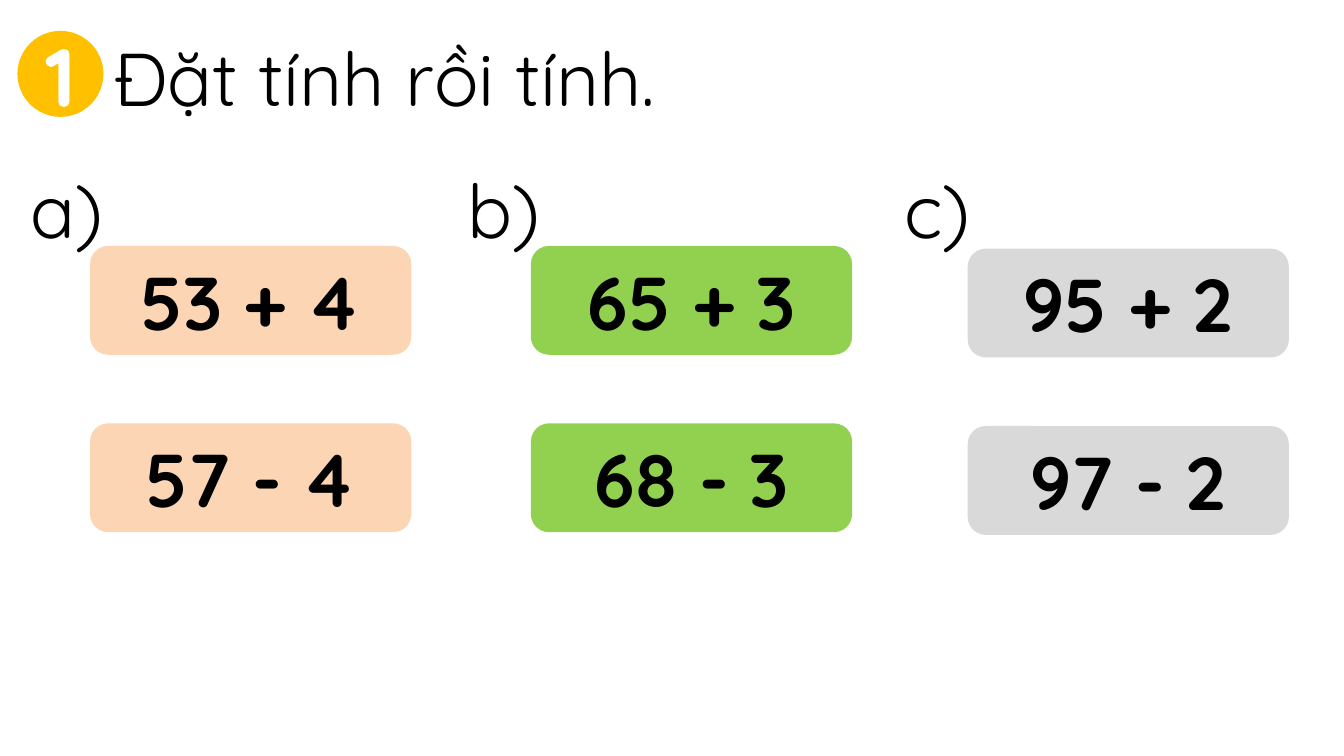
"""Build a maths exercise slide with three columns of sums to set out and solve."""
from lxml.etree import SubElement
from pptx import Presentation
from pptx.dml.color import RGBColor
from pptx.enum.shapes import MSO_SHAPE
from pptx.enum.text import MSO_ANCHOR, MSO_AUTO_SIZE, PP_ALIGN
from pptx.oxml.ns import qn
from pptx.util import Inches, Pt

TITLE = "Đặt tính rồi tính."
NUMBER = "1"
COLUMNS = [
    {"label": "a)", "sums": ["53 + 4", "57 - 4"], "fill": "peach", "left": 0.67, "top": 1.83},
    {"label": "b)", "sums": ["65 + 3", "68 - 3"], "fill": "green", "left": 3.95, "top": 1.83},
    {"label": "c)", "sums": ["95 + 2", "97 - 2"], "fill": "grey", "left": 7.2, "top": 1.85},
]
THEME = {
    "font": "Quicksand", "text": 40, "number": 44, "outline": 1.45,
    "black": "000000", "white": "FFFFFF", "amber": "FFC000",
    "peach": "FCD5B5", "green": "92D050", "grey": "D9D9D9",
}
SLIDE_W = 10
SLIDE_H = SLIDE_W * 9 / 16
LABEL_LEFT, LABEL_TOP, LABEL_PITCH = 0.13, 1.08, 3.25
CARD_W, CARD_H, CARD_PITCH = 2.39, 0.81, 1.32


def color(name):
    return RGBColor.from_string(THEME[name])


def write(sp, text, align, size="text", ink="black", bold=False, wrap=True):
    tf = sp.text_frame
    tf.text = text
    tf.auto_size = MSO_AUTO_SIZE.NONE
    tf.word_wrap = wrap
    tf.vertical_anchor = MSO_ANCHOR.MIDDLE
    p = tf.paragraphs[0]
    p.alignment = align
    r = p.runs[0]
    r.font.name = THEME["font"]
    r.font.size = Pt(THEME[size])
    r.font.bold = bold
    r.font.color.rgb = color(ink)
    return r


def add_filled(s, kind, box, fill):
    sp = s.shapes.add_shape(kind, *map(Inches, box))
    sp.shadow.inherit = False
    sp.fill.solid()
    sp.fill.fore_color.rgb = color(fill)
    sp.line.fill.background()
    return sp


def outline(r, ink):
    rpr = r.font._element
    ln = SubElement(rpr, qn("a:ln"), w=str(Pt(THEME["outline"])))
    fill = SubElement(ln, qn("a:solidFill"))
    SubElement(fill, qn("a:srgbClr"), val=THEME[ink])
    rpr.insert(0, ln)


def add_title(s):
    sp = s.shapes.title
    sp.left, sp.top, sp.width, sp.height = map(Inches, (0.75, 0.1, 6.88, 0.94))
    write(sp, TITLE, PP_ALIGN.JUSTIFY)


def add_number(s):
    sp = add_filled(s, MSO_SHAPE.OVAL, (0.13, 0.23, 0.64, 0.64), "amber")
    r = write(sp, NUMBER, PP_ALIGN.CENTER, "number", "white", bold=True, wrap=False)
    outline(r, "white")


def add_columns(s):
    for col in COLUMNS:
        for row, text in enumerate(col["sums"]):
            box = (col["left"], col["top"] + row * CARD_PITCH, CARD_W, CARD_H)
            sp = add_filled(s, MSO_SHAPE.ROUNDED_RECTANGLE, box, col["fill"])
            write(sp, text, PP_ALIGN.CENTER, bold=True)
    for i, col in enumerate(COLUMNS):
        box = (LABEL_LEFT + i * LABEL_PITCH, LABEL_TOP, 0.87, 0.94)
        sp = s.shapes.add_textbox(*map(Inches, box))
        write(sp, col["label"], PP_ALIGN.JUSTIFY)


def main():
    prs = Presentation()
    prs.slide_width, prs.slide_height = Inches(SLIDE_W), Inches(SLIDE_H)
    s = prs.slides.add_slide(prs.slide_layouts.get_by_name("Title Only"))
    s.background.fill.solid()
    s.background.fill.fore_color.rgb = color("white")
    add_title(s)
    add_number(s)
    add_columns(s)
    prs.save("out.pptx")


if __name__ == "__main__":
    main()
